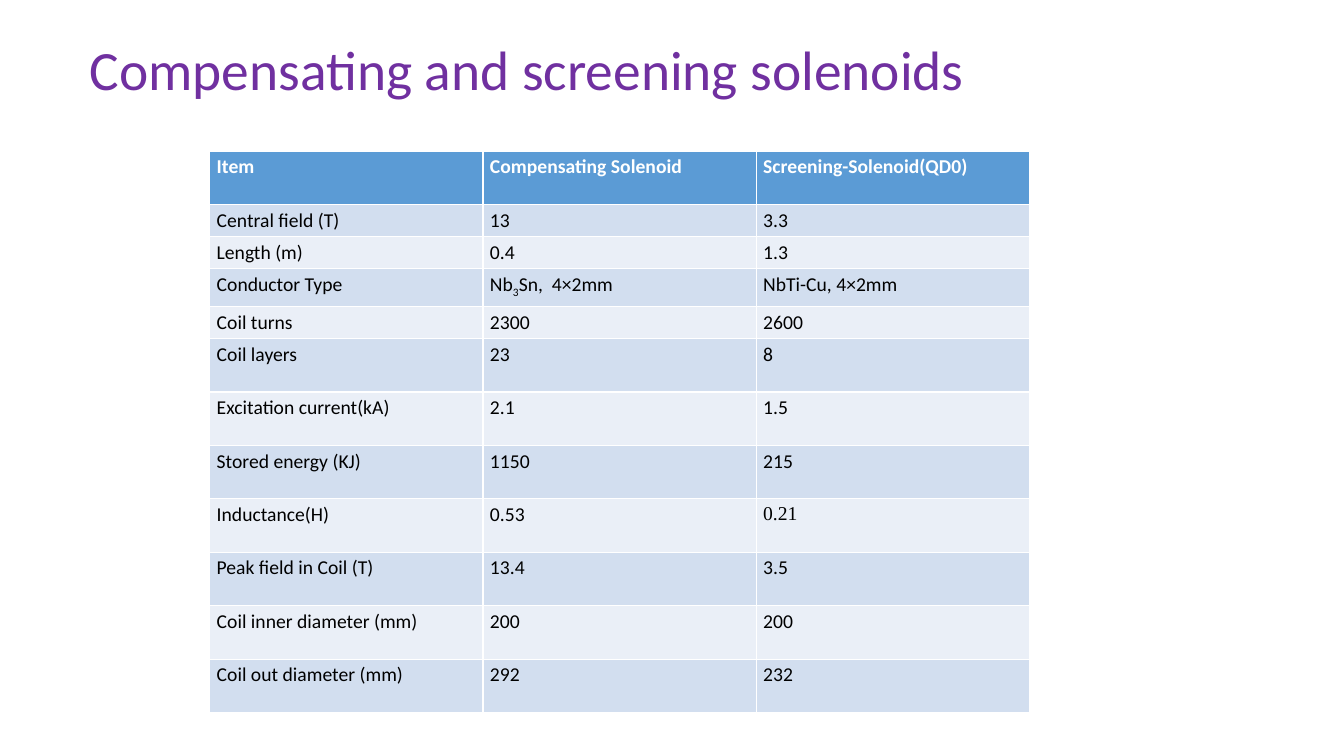
from pptx import Presentation
from pptx.dml.color import RGBColor
from pptx.enum.text import MSO_ANCHOR, MSO_AUTO_SIZE, PP_ALIGN
from pptx.util import Inches, Pt

# Content: a cell is a string, or a list of (text, format) runs
TITLE = "Compensating and screening solenoids"
ROWS = [
    ("Item", "Compensating Solenoid", "Screening-Solenoid(QD0)"),
    ("Central field (T)", "13", "3.3"),
    ("Length (m)", "0.4", "1.3"),
    ("Conductor Type",
     [("Nb", {}), ("3", {"baseline": -25}), ("Sn,  4×2mm", {})],
     "NbTi-Cu, 4×2mm"),
    ("Coil turns", "2300", "2600"),
    ("Coil layers", "23", "8"),
    ("Excitation current(kA)", "2.1", "1.5"),
    ("Stored energy (KJ)", "1150", "215"),
    ("Inductance(H)", "0.53", [("0.21", {"font": "Times New Roman"})]),
    ("Peak field in Coil (T)", "13.4", "3.5"),
    ("Coil inner diameter (mm)", "200", "200"),
    ("Coil out diameter (mm)", "292", "232"),
]
COLORS = {"title": "7030A0", "header": "5B9BD5", "odd": "D2DEEF",
          "even": "EAEFF7", "white": "FFFFFF", "black": "000000"}
COL_W = 2.71
ROW_H = 0.53
SHORT_ROWS = {1: 0.3, 2: 0.3, 3: 0.38, 4: 0.3}


def rgb(name):
    return RGBColor.from_string(COLORS[name])


def add_text(p, text, size=14, color="black", bold=False, font="Calibri",
             baseline=None):
    r = p.add_run()
    r.text = text
    r.font.size = Pt(size)
    r.font.bold = bold
    r.font.name = font
    r.font.color.rgb = rgb(color)
    if baseline:
        r.font._element.set("baseline", str(baseline * 1000))


prs = Presentation()
prs.slide_width, prs.slide_height = Inches(13.33), Inches(7.5)
s = prs.slides.add_slide(prs.slide_layouts[5])

# Title
sp = s.shapes.title
sp.left, sp.top, sp.width, sp.height = map(Inches, (0.79, 0.09, 9, 1.25))
tf = sp.text_frame
tf.word_wrap = True
tf.auto_size = MSO_AUTO_SIZE.NONE
tf.vertical_anchor = MSO_ANCHOR.MIDDLE
p = tf.paragraphs[0]
p.alignment = PP_ALIGN.LEFT
p.line_spacing = 0.9
add_text(p, TITLE, size=39.6, color="title")

# Table: the default style supplies the white cell borders
heights = [SHORT_ROWS.get(i, ROW_H) for i in range(len(ROWS))]
n_cols = len(ROWS[0])
table = s.shapes.add_table(len(ROWS), n_cols, Inches(2.08), Inches(1.5),
                           Inches(COL_W * n_cols), Inches(sum(heights))).table
for col in table.columns:
    col.width = Inches(COL_W)

for i, row in enumerate(ROWS):
    table.rows[i].height = Inches(heights[i])
    header = i == 0
    fill = "header" if header else "odd" if i % 2 else "even"
    for j, content in enumerate(row):
        cell = table.cell(i, j)
        cell.margin_left = cell.margin_right = Inches(0.07)
        cell.margin_top = cell.margin_bottom = Inches(0.04)
        cell.fill.solid()
        cell.fill.fore_color.rgb = rgb(fill)
        runs = [(content, {})] if isinstance(content, str) else content
        for text, fmt in runs:
            add_text(cell.text_frame.paragraphs[0], text, bold=header,
                     color="white" if header else "black", **fmt)

prs.save("out.pptx")
